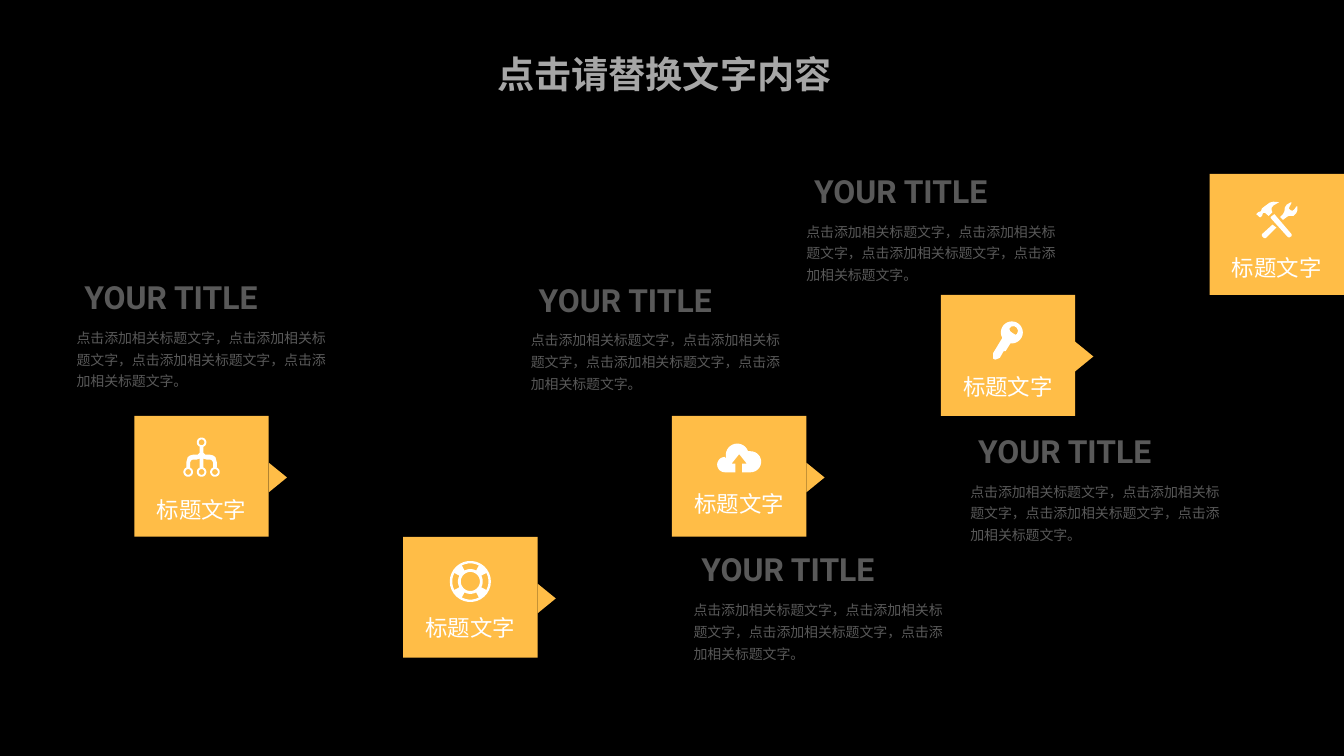
import math
from dataclasses import dataclass

import pptx
import pptx.dml.color
import pptx.enum.shapes
import pptx.enum.text
import pptx.util

HEADLINE = "点击请替换文字内容"
STEP_LABEL = "标题文字"
CAPTION_TITLE = "YOUR TITLE"
CAPTION_BODY = "点击添加相关标题文字，" * 3 + "点击添加相关标题文字。"

# icon, column, row, icon top and label top as shares of a cell's height
STEPS = [
    ("network", 1, 2, 0.18, 0.53),
    ("lifebuoy", 3, 3, 0.2, 0.5),
    ("cloud", 5, 2, 0.23, 0.48),
    ("key", 7, 1, 0.22, 0.51),
    ("tools", 9, 0, 0.23, 0.53),
]
# column and row where each caption starts
CAPTIONS = [(0.5, 0.82), (3.88, 0.84), (5.09, 3.07), (5.93, -0.06), (7.15, 2.09)]


@dataclass(frozen=True)
class Theme:
    background: str = "000000"
    amber: str = "FFBD47"
    white: str = "FFFFFF"
    headline: str = "A6A6A6"
    caption: str = "595959"
    headline_font: str = "Arial"
    title_font: str = "Roboto"
    body_font: str = "Noto Sans CJK SC"
    headline_size: float = 28
    title_size: float = 24
    label_size: float = 16.9
    body_size: float = 10.5


THEME = Theme()
WIDTH, HEIGHT = 14.06, 7.91
COLUMN, ROW = WIDTH / 10, HEIGHT * 0.16
GRID_TOP = HEIGHT * 0.23
ARROW_BASE, ARROW_HEIGHT = 0.31, 0.19
ICON_UNIT = 0.01
inches = pptx.util.Inches


def arc(x, y, radius, start, end):
    """Points along a clockwise arc, angles in degrees from the right."""
    count = math.ceil((end - start) / 12)
    angles = [math.radians(start + (end - start) * i / count) for i in range(count + 1)]
    return [(x + radius * math.cos(a), y + radius * math.sin(a)) for a in angles]


def ring(x, y, outer, inner):
    return [arc(x, y, outer, 0, 360), arc(x, y, inner, 0, 360)]


def network():
    half = [(17, 10), (17, 16), (15, 18), (10, 18), (7, 18.7), (4.5, 20.5),
            (3, 26), (3, 31), (7, 31), (7, 26), (8, 24), (10, 23), (14, 23),
            (17, 22), (17, 31)]
    branches = half + [(38 - x, y) for x, y in reversed(half)]
    nodes = [(19, 5), (5, 36), (19, 36), (33, 36)]
    return [branches] + [circle for x, y in nodes for circle in ring(x, y, 5, 3)]


def lifebuoy():
    centre = 21.5
    gaps = [arc(centre, centre, 19, a - 28, a + 28)
            + arc(centre, centre, 13, a - 28, a + 28)[::-1]
            for a in range(0, 360, 90)]
    return ring(centre, centre, 21.5, 10) + gaps


def cloud():
    arrow = [(27, 30), (27, 21), (32, 21), (24, 11), (16, 21), (20, 21), (20, 30)]
    return [arc(9, 22, 8, 90, 270) + arc(22, 12, 12, 160, 340)
            + arc(36, 19, 11, 270, 450) + arrow]


def key():
    blade = [(13, 31), (11, 31), (7, 38), (5, 39), (2, 40), (0, 39), (0, 33)]
    eye = [(25, 13), (23.5, 14), (20, 12), (17.5, 10), (17, 7.5), (19, 5.3),
           (22, 5), (24.5, 6.5), (26, 9.5)]
    return [arc(19.5, 11.5, 11.5, 150, 457) + blade, eye]


def tools():
    hammer_head = [(7, 12), (9, 11.5), (13, 15), (14, 14), (17, 11), (16, 9),
                   (16, 6.5), (18, 4), (24, 0.5), (18, 0), (14, 1), (10, 4),
                   (6, 7), (5, 10), (2, 11), (0, 13), (4, 16.5), (6, 15)]
    wrench_handle = [(19, 13), (15, 16), (15, 17), (33, 37), (34.5, 37.5),
                     (37, 36), (37, 34)]
    wrench_head = [(43, 5), (42, 5), (40, 8), (38, 9.5), (36, 9), (34, 7),
                   (35, 5), (37, 1), (36, 0.7), (32, 3), (30, 6), (29.5, 10),
                   (28, 13), (25, 16), (28, 19), (32, 16), (34, 15), (36, 15),
                   (39, 15), (42, 12), (43, 9)]
    hammer_handle = [(6, 34), (6, 36), (8, 38), (10, 38), (21, 27), (17, 24)]
    return [hammer_head, wrench_handle, wrench_head, hammer_handle]


ICONS = {"network": network, "lifebuoy": lifebuoy, "cloud": cloud, "key": key, "tools": tools}


def rgb(color):
    return pptx.dml.color.RGBColor.from_string(color)


def paint(shape, color):
    shape.shadow.inherit = False
    shape.fill.solid()
    shape.fill.fore_color.rgb = rgb(color)
    shape.line.fill.background()


def add_preset(slide, kind, left, top, width, height):
    shape = slide.shapes.add_shape(kind, *map(inches, (left, top, width, height)))
    paint(shape, THEME.amber)
    return shape


def add_icon(slide, contours, centre, top):
    xs = [x for contour in contours for x, _ in contour]
    left = centre - (min(xs) + max(xs)) / 2 * ICON_UNIT
    fine = [[(x * 100, y * 100) for x, y in contour] for contour in contours]
    builder = slide.shapes.build_freeform(*fine[0][0], scale=914400 * ICON_UNIT / 100)
    for index, contour in enumerate(fine):
        if index:
            builder.move_to(*contour[0])
        builder.add_line_segments(contour[1:], close=True)
    paint(builder.convert_to_shape(inches(left), inches(top)), THEME.white)


def write(shape, text, font, size, color, bold=False, spacing=1.0, centred=False):
    shape.text_frame.word_wrap = True
    shape.text_frame.text = text
    paragraph = shape.text_frame.paragraphs[0]
    paragraph.line_spacing = spacing
    align = pptx.enum.text.PP_ALIGN
    paragraph.alignment = align.CENTER if centred else align.LEFT
    paragraph.font.name = font
    paragraph.font.size = pptx.util.Pt(size)
    paragraph.font.bold = bold
    paragraph.font.color.rgb = rgb(color)


def add_text(slide, left, top, width, height, *style, **options):
    box = slide.shapes.add_textbox(*map(inches, (left, top, width, height)))
    write(box, *style, **options)
    return box


def add_headline(slide):
    title = slide.shapes.title
    title.left, title.top, title.width, title.height = map(inches, (4.18, 0.25, 5.54, 0.72))
    write(title, HEADLINE, THEME.headline_font, THEME.headline_size, THEME.headline,
          bold=True, spacing=1.5, centred=True)
    title.text_frame.vertical_anchor = pptx.enum.text.MSO_ANCHOR.TOP


def add_step(slide, icon, column, row, icon_top, label_top, has_arrow):
    shapes = pptx.enum.shapes.MSO_SHAPE
    left, top = column * COLUMN, GRID_TOP + row * ROW
    centre = left + COLUMN / 2
    add_preset(slide, shapes.RECTANGLE, left, top, COLUMN, ROW)
    if has_arrow:
        arrow = add_preset(slide, shapes.ISOSCELES_TRIANGLE,
                           left + COLUMN + (ARROW_HEIGHT - ARROW_BASE) / 2,
                           top + 0.51 * ROW - ARROW_HEIGHT / 2, ARROW_BASE, ARROW_HEIGHT)
        arrow.rotation = 90
    add_icon(slide, ICONS[icon](), centre, top + icon_top * ROW)
    label = add_text(slide, centre - 0.75, top + label_top * ROW, 1.5, 0.54, STEP_LABEL,
                     THEME.headline_font, THEME.label_size, THEME.white,
                     spacing=1.3, centred=True)
    label.text_frame.vertical_anchor = pptx.enum.text.MSO_ANCHOR.MIDDLE


def add_caption(slide, column, row):
    left, top = column * COLUMN, GRID_TOP + row * ROW
    title = add_text(slide, left, top, 3.32, 0.5, CAPTION_TITLE, THEME.title_font,
                     THEME.title_size, THEME.caption, bold=True)
    title.text_frame.margin_left = inches(0.18)
    add_text(slide, left, top + 0.49, 2.95, 0.79, CAPTION_BODY, THEME.body_font,
             THEME.body_size, THEME.caption, spacing=1.3)


def main():
    deck = pptx.Presentation()
    deck.slide_width, deck.slide_height = inches(WIDTH), inches(HEIGHT)
    slide = deck.slides.add_slide(deck.slide_layouts[5])
    slide.background.fill.solid()
    slide.background.fill.fore_color.rgb = rgb(THEME.background)
    add_headline(slide)
    for step in STEPS:
        add_step(slide, *step, has_arrow=step is not STEPS[-1])
    for column, row in CAPTIONS:
        add_caption(slide, column, row)
    deck.save("out.pptx")


if __name__ == "__main__":
    main()
